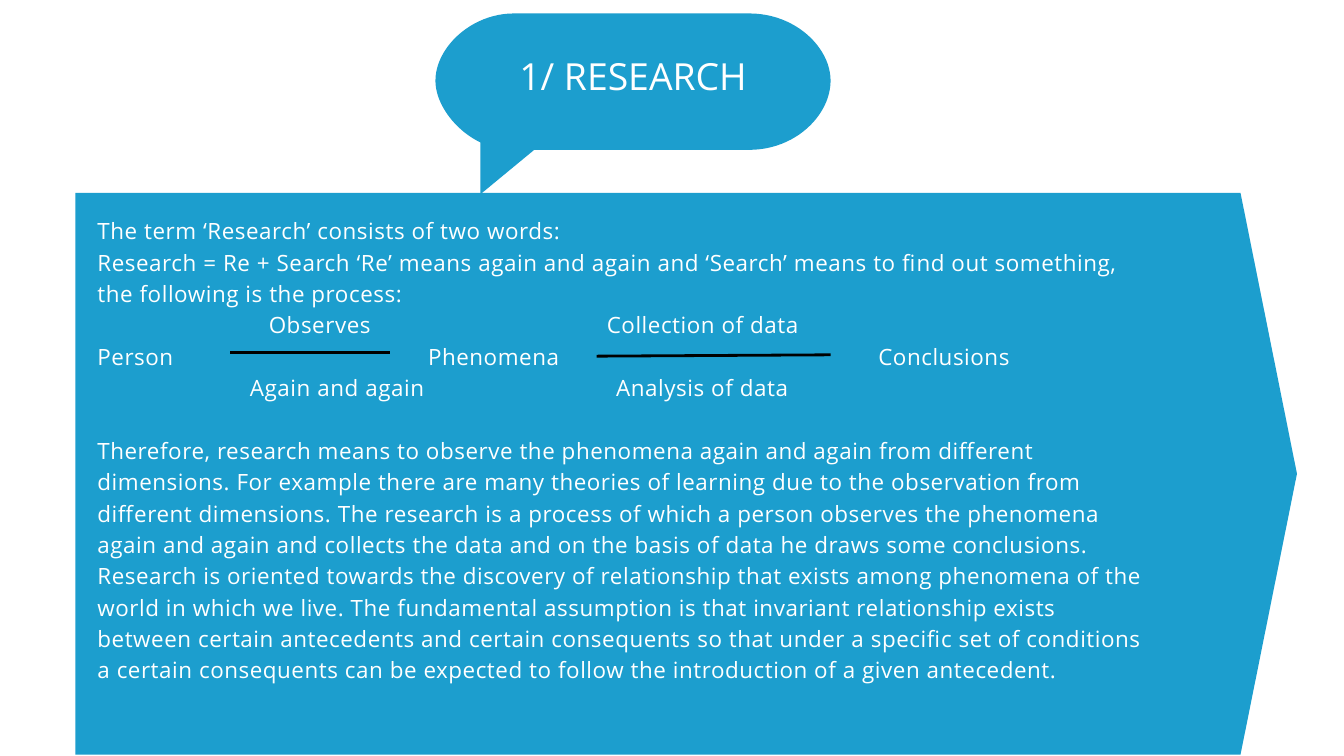
from lxml import etree
from pptx import Presentation
from pptx.dml.color import RGBColor
from pptx.enum import shapes, text
from pptx.oxml.ns import qn
from pptx.util import Inches, Pt

BLUE = RGBColor(0x1C, 0x9E, 0xCE)
WHITE = RGBColor(0xFF, 0xFF, 0xFF)
BLACK = RGBColor(0, 0, 0)
FONT = "Open Sans"

INTRO = [
    "The term ‘Research’ consists of two words:",
    "Research = Re + Search ‘Re’ means again and again and ‘Search’ means "
    "to find out something, the following is the process:",
]
STEPS = [
    ("\tObserves\tCollection of data", (2.55, 7.58)),
    ("Person\tPhenomena\tConclusions", (4.92, 11.62)),
    ("\tAgain and again\tAnalysis of data", (2.27, 7.72)),
]
SUMMARY = (
    "Therefore, research means to observe the phenomena again and again from "
    "different dimensions. For example there are many theories of learning due "
    "to the observation from different dimensions. The research is a process of "
    "which a person observes the phenomena again and again and collects the data "
    "and on the basis of data he draws some conclusions. Research is oriented "
    "towards the discovery of relationship that exists among phenomena of the "
    "world in which we live. The fundamental assumption is that invariant "
    "relationship exists between certain antecedents and certain consequents so "
    "that under a specific set of conditions a certain consequents can be "
    "expected to follow the introduction of a given antecedent."
)


def curve(a, b, c, d, steps=24):
    points = []
    for i in range(steps + 1):
        t = i / steps
        s = 1 - t
        points.append(tuple(
            s**3 * p + 3 * s * s * t * q + 3 * s * t * t * r + t**3 * v
            for p, q, r, v in zip(a, b, c, d)))
    return points


def add_form(slide, points):
    spots = [(Inches(x), Inches(y)) for x, y in points]
    form = slide.shapes.build_freeform(*spots[0], scale=1.0)
    form.add_line_segments(spots[1:], close=True)
    shape = form.convert_to_shape()
    shape.shadow.inherit = False
    shape.fill.solid()
    shape.fill.fore_color.rgb = BLUE
    shape.line.fill.background()


def add_box(slide, left, top, width, height, inset=0, anchor=text.MSO_ANCHOR.TOP):
    box = slide.shapes.add_textbox(*map(Inches, (left, top, width, height)))
    frame = box.text_frame
    frame.word_wrap = True
    frame.vertical_anchor = anchor
    frame.margin_left = frame.margin_right = Inches(inset)
    frame.margin_top = frame.margin_bottom = Inches(inset)
    return frame


def add_text(frame, words, size=24, lead=33.6, align=text.PP_ALIGN.LEFT,
             track=0.6, before=0, tabs=()):
    first = frame.paragraphs[0]
    para = frame.add_paragraph() if first.runs else first
    para.alignment = align
    para.line_spacing = Pt(lead)
    para.space_before = Pt(before)
    run = para.add_run()
    run.text = words
    run.font.size = Pt(size)
    run.font.name = FONT
    run.font.color.rgb = WHITE
    if track:
        run.font._element.set("spc", str(round(track * 100)))
    if tabs:
        stops = etree.SubElement(para._p.get_or_add_pPr(), qn("a:tabLst"))
        for tab in tabs:
            etree.SubElement(stops, qn("a:tab"), pos=str(Inches(tab)), algn="l")


def add_line(slide, *ends):
    line = slide.shapes.add_connector(
        shapes.MSO_CONNECTOR.STRAIGHT, *map(Inches, ends))
    line.line.color.rgb = BLACK
    line.line.width = Pt(3)
    etree.SubElement(line._element.spPr, qn("a:effectLst"))


def add_title(slide):
    add_form(slide, [
        *curve((7.65, 0.2), (7.01, 0.2), (6.48, 0.71), (6.48, 1.2)),
        *curve((6.48, 1.2), (6.48, 1.54), (6.76, 1.93), (7.15, 2.12)),
        (7.15, 2.89), (7.95, 2.23),
        *curve((11.15, 2.23), (11.84, 2.23), (12.36, 1.71), (12.36, 1.2)),
        *curve((12.36, 1.2), (12.36, 0.71), (11.84, 0.2), (11.15, 0.2)),
    ])
    frame = add_box(slide, 6.48, 0.04, 5.88, 2.06, 0.06, text.MSO_ANCHOR.MIDDLE)
    add_text(frame, "1/ RESEARCH", size=40, lead=56,
             align=text.PP_ALIGN.CENTER, track=0)


def add_body(slide):
    add_form(slide, [(1.12, 2.87), (18.46, 2.87), (19.3, 7.05),
                     (18.46, 11.23), (1.12, 11.23)])
    frame = add_box(slide, 1.45, 3.17, 15.64, 7.77)
    for words in INTRO:
        add_text(frame, words)
    for words, tabs in STEPS:
        add_text(frame, words, tabs=tabs)
    add_text(frame, SUMMARY, before=33.6)
    add_line(slide, 3.43, 5.24, 5.8, 5.24)
    add_line(slide, 8.88, 5.3, 12.36, 5.28)


def main():
    deck = Presentation()
    deck.slide_width = Inches(20)
    deck.slide_height = Inches(11.25)
    slide = deck.slides.add_slide(deck.slide_layouts[6])
    add_title(slide)
    add_body(slide)
    deck.save("out.pptx")


if __name__ == "__main__":
    main()
